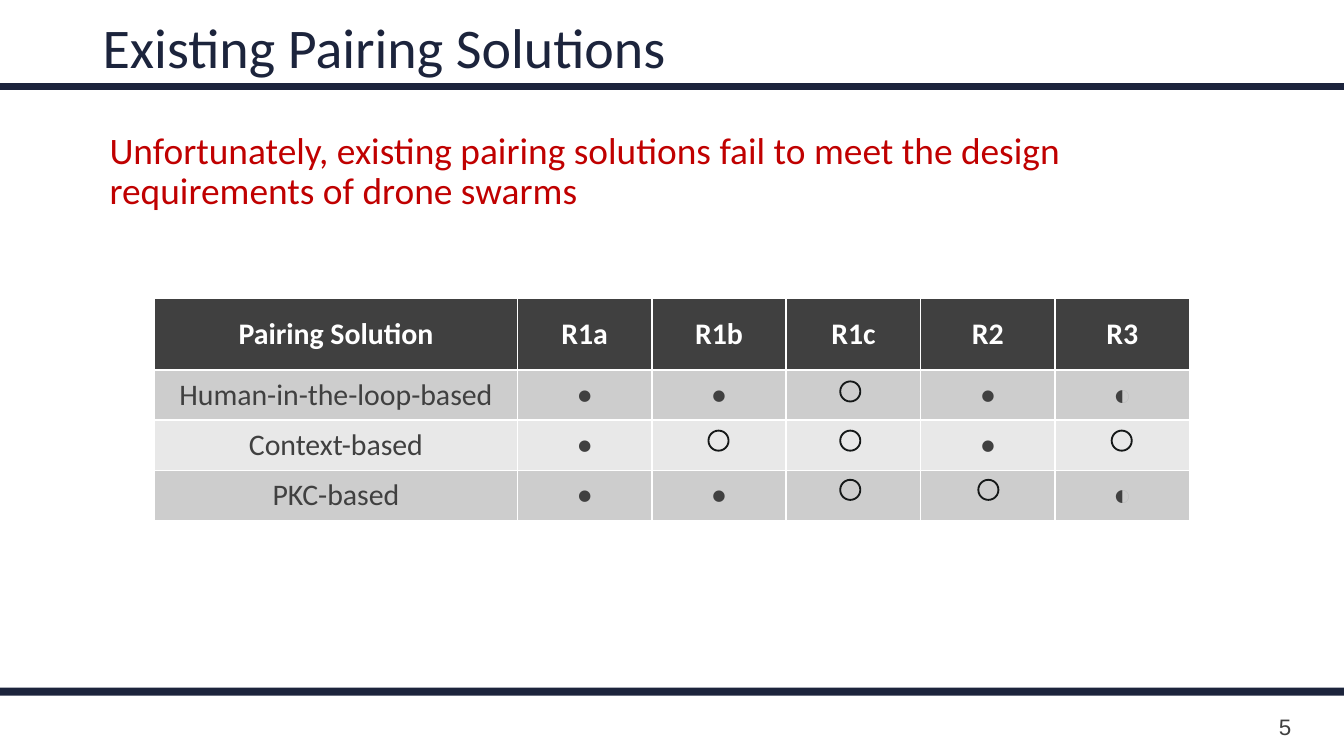
"""Build the slide comparing existing pairing solutions."""
from typing import NamedTuple

from pptx import Presentation
from pptx import util as u
from pptx.dml import color
from pptx.enum import shapes, text
from pptx.oxml import ns, xmlchemy

NAVY, GREY, RED, WHITE, INK = "1C243C", "404040", "C00000", "FFFFFF", "151818"
BANDS = ("CDCDCD", "E8E8E8")
FULL, HALF, RING = "⚫️", "◐", ""
COLUMN_WIDTHS = (6.86, 2.54, 2.54, 2.54, 2.54, 2.54)
ROW_HEIGHTS = (1.35, 0.95, 0.95, 0.95)
RING_LEFTS = {2: 13.39, 3: 15.88, 4: 18.49, 5: 21.01}
RING_TOP, RING_PITCH, RING_SIZE = 7.21, 0.93, 0.38


class Frame(NamedTuple):
    left: float
    top: float
    width: float
    height: float


class Style(NamedTuple):
    size: float
    colour: str
    font: str = "Calibri"
    bold: bool = False


class Solution(NamedTuple):
    name: str
    marks: tuple[str, ...]


HEADINGS = ("Pairing Solution", "R1a", "R1b", "R1c", "R2", "R3")
SOLUTIONS = (
    Solution("Human-in-the-loop-based", (FULL, FULL, RING, FULL, HALF)),
    Solution("Context-based", (FULL, RING, RING, FULL, RING)),
    Solution("PKC-based", (FULL, FULL, RING, RING, HALF)),
)
BARS = (Frame(0, 1.57, 25.4, 0.13), Frame(0, 13, 25.4, 0.15))


def rgb(value: str) -> color.RGBColor:
    return color.RGBColor.from_string(value)


def lengths(frame: Frame) -> list[u.Cm]:
    return [u.Cm(value) for value in frame]


def style_para(para, style: Style) -> None:
    para.font.name = style.font
    para.font.size = u.Pt(style.size)
    para.font.bold = style.bold
    para.font.color.rgb = rgb(style.colour)


def fill_text(box, words: str, style: Style, anchor=text.MSO_ANCHOR.TOP):
    frame = box.text_frame
    frame.word_wrap = True
    frame.auto_size = text.MSO_AUTO_SIZE.NONE
    frame.vertical_anchor = anchor
    frame.margin_left = frame.margin_right = u.Cm(0.19)
    frame.margin_top = frame.margin_bottom = u.Cm(0.1)
    frame.text = words
    para = frame.paragraphs[0]
    para.alignment = text.PP_ALIGN.LEFT
    para.space_before = u.Pt(0)
    properties = para._p.get_or_add_pPr()
    properties.set("marL", "0")
    properties.set("indent", "0")
    properties.append(xmlchemy.OxmlElement("a:buNone"))
    style_para(para, style)
    return para


def place(box, frame: Frame) -> None:
    box.left, box.top, box.width, box.height = lengths(frame)


def add_bar(page, frame: Frame) -> None:
    bar = page.shapes.add_shape(shapes.MSO_SHAPE.RECTANGLE, *lengths(frame))
    bar.shadow.inherit = False
    bar.fill.solid()
    bar.fill.fore_color.rgb = rgb(NAVY)
    bar.line.fill.background()


def add_ring(page, row: int, column: int) -> None:
    frame = Frame(RING_LEFTS[column], RING_TOP + row * RING_PITCH, RING_SIZE, RING_SIZE)
    ring = page.shapes.add_shape(shapes.MSO_SHAPE.OVAL, *lengths(frame))
    ring.shadow.inherit = False
    ring.fill.background()
    ring.line.color.rgb = rgb(INK)
    ring.line.width = u.Pt(1)


def fill_cell(cell, words: str, style: Style, fill: str) -> None:
    cell.fill.solid()
    cell.fill.fore_color.rgb = rgb(fill)
    cell.vertical_anchor = text.MSO_ANCHOR.MIDDLE
    if not words:
        cell.margin_top = cell.margin_bottom = 0
        return
    cell.text = words
    para = cell.text_frame.paragraphs[0]
    para.alignment = text.PP_ALIGN.CENTER
    style_para(para, style)


def add_comparison(page) -> None:
    frame = Frame(2.92, 5.64, sum(COLUMN_WIDTHS), sum(ROW_HEIGHTS))
    table = page.shapes.add_table(len(ROW_HEIGHTS), len(COLUMN_WIDTHS), *lengths(frame)).table
    for column, width in zip(table.columns, COLUMN_WIDTHS):
        column.width = u.Cm(width)
    for row, height in zip(table.rows, ROW_HEIGHTS):
        row.height = u.Cm(height)
    for column, heading in enumerate(HEADINGS):
        fill_cell(table.cell(0, column), heading, Style(16, WHITE, bold=True), GREY)
    for row, solution in enumerate(SOLUTIONS):
        band = BANDS[row % 2]
        fill_cell(table.cell(row + 1, 0), solution.name, Style(16, GREY), band)
        for column, mark in enumerate(solution.marks, 1):
            style = Style(11 if mark == FULL else 16, GREY, "Arial")
            fill_cell(table.cell(row + 1, column), mark, style, band)
            if mark == RING:
                add_ring(page, row, column)


def main() -> None:
    deck = Presentation()
    deck.slide_width, deck.slide_height = u.Cm(25.4), u.Cm(14.29)
    page = deck.slides.add_slide(deck.slide_layouts[1])
    for bar in BARS:
        add_bar(page, bar)

    title, body = page.shapes.title, page.placeholders[1]
    place(title, Frame(1.75, 0.28, 21.9, 1.57))
    para = fill_text(title, "Existing Pairing Solutions", Style(30, NAVY))
    para.line_spacing = 0.9
    place(body, Frame(1.75, 2.39, 21.9, 10.64))
    message = ("Unfortunately, existing pairing solutions fail to meet "
               "the design requirements of drone swarms")
    para = fill_text(body, message, Style(20, RED))
    para.line_spacing = 0.9
    para._p.pPr.set("marL", str(u.Cm(0.13)))

    add_comparison(page)
    number = page.shapes.add_textbox(*lengths(Frame(23.98, 13.49, 1.32, 0.48)))
    fill_text(number, "5", Style(12, GREY, "Arial"), text.MSO_ANCHOR.MIDDLE)
    deck.save("out.pptx")


if __name__ == "__main__":
    main()
